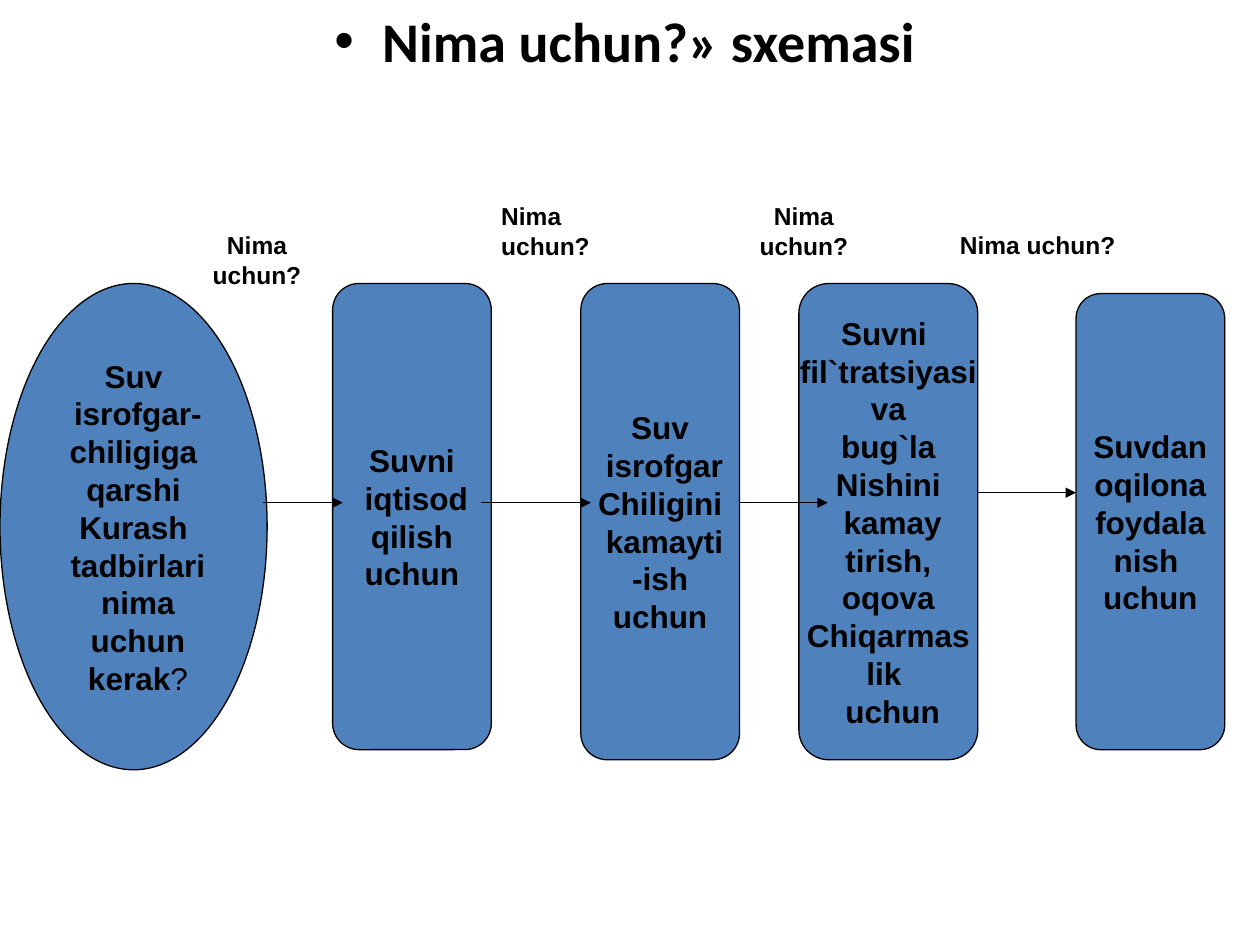
from lxml import etree
from pptx import Presentation
from pptx.dml.color import RGBColor
from pptx.enum.shapes import MSO_CONNECTOR, MSO_SHAPE
from pptx.enum.text import MSO_ANCHOR, MSO_AUTO_SIZE, PP_ALIGN
from pptx.oxml.ns import qn
from pptx.util import Inches, Pt

BLACK = RGBColor(0x00, 0x00, 0x00)
BLUE = RGBColor(0x4F, 0x81, 0xBD)
CENTER, LEFT = PP_ALIGN.CENTER, PP_ALIGN.LEFT
TOP, MIDDLE = MSO_ANCHOR.TOP, MSO_ANCHOR.MIDDLE
OVAL = MSO_SHAPE.FLOWCHART_CONNECTOR
ROUNDED = MSO_SHAPE.FLOWCHART_ALTERNATE_PROCESS
TITLE_ONLY = 5
ROW_TOP = 2.25
LABEL_FORMAT = {"name": "Arial", "size": Pt(14), "bold": True}
STEP_FORMAT = {"name": "Arial", "size": Pt(18), "bold": True}
TITLE_FORMAT = {"name": "Calibri", "size": Pt(32), "bold": True}


def add_span(para, text, text_format):
    span = para.add_run()
    span.text = text
    span.font.color.rgb = BLACK
    for name, value in text_format.items():
        setattr(span.font, name, value)
    return span


deck = Presentation()
deck.slide_width, deck.slide_height = Inches(10), Inches(7.5)
page = deck.slides.add_slide(deck.slide_layouts[TITLE_ONLY])

# Title with a hanging bullet
title = page.shapes.title
title.left, title.top = Inches(0.51), 0
title.width, title.height = Inches(9), Inches(6.41)
title.text_frame.vertical_anchor = TOP
title.text_frame.auto_size = MSO_AUTO_SIZE.NONE
para = title.text_frame.paragraphs[0]
para.alignment = CENTER
para.space_before = Pt(6.4)
add_span(para, "Nima uchun?» sxemasi ", TITLE_FORMAT)
props = para._p.get_or_add_pPr()
props.set("marL", str(Inches(0.38)))
props.set("indent", str(-Inches(0.38)))
etree.SubElement(props, qn("a:buFont")).set("typeface", "Arial")
etree.SubElement(props, qn("a:buChar")).set("char", "•")

# Chain of steps: preset, left, top, width, height, lines
steps = [
    (OVAL, 0, ROW_TOP, 2.12, 3.86,
     ["Suv", " isrofgar-", "chiligiga", " qarshi ", "Kurash", " tadbirlari",
      " nima", " uchun", " kerak"]),
    (ROUNDED, 2.64, ROW_TOP, 1.26, 3.7,
     ["Suvni", " iqtisod", " qilish ", "uchun"]),
    (ROUNDED, 4.61, ROW_TOP, 1.26, 3.78,
     ["Suv", " isrofgar", "Chiligini", " kamayti", "-ish", "uchun"]),
    (ROUNDED, 6.34, ROW_TOP, 1.42, 3.78,
     ["Suvni ", "fil`tratsiyasi", " va ", "bug`la", "Nishini", " kamay",
      "tirish,", " oqova ", "Chiqarmas", "lik ", " uchun"]),
    (ROUNDED, 8.54, 2.33, 1.18, 3.62,
     ["Suvdan", " oqilona ", "foydala", "nish ", "uchun"]),
]
for preset, left, top, width, height, lines in steps:
    box = page.shapes.add_shape(
        preset, Inches(left), Inches(top), Inches(width), Inches(height))
    box.shadow.inherit = False
    box.fill.solid()
    box.fill.fore_color.rgb = BLUE
    box.line.color.rgb = BLACK
    box.line.width = Pt(0.75)
    frame = box.text_frame
    frame.word_wrap = False
    frame.vertical_anchor = MIDDLE
    for number, line in enumerate(lines):
        para = frame.add_paragraph() if number else frame.paragraphs[0]
        para.alignment = CENTER
        add_span(para, line, STEP_FORMAT)
    if preset == OVAL:
        add_span(para, "?", {**STEP_FORMAT, "bold": False})

# Arrows between the steps: start, end, height on the page
for start, end, y in [(2.09, 2.72, 3.99), (3.82, 4.69, 3.99),
                      (5.87, 6.57, 3.99), (7.76, 8.54, 3.91)]:
    arrow = page.shapes.add_connector(
        MSO_CONNECTOR.STRAIGHT, Inches(start), Inches(y), Inches(end), Inches(y))
    arrow.line.color.rgb = BLACK
    arrow.line.width = Pt(0.75)
    etree.SubElement(arrow.line._get_or_add_ln(), qn("a:tailEnd")).set("type", "triangle")
    etree.SubElement(arrow._element.spPr, qn("a:effectLst"))

# The question above each arrow
for left, top, width, height, alignment in [
        (1.53, 1.78, 1.02, 0.57, CENTER), (3.88, 1.55, 1.2, 0.77, LEFT),
        (5.79, 1.55, 1.18, 0.57, CENTER), (7.52, 1.78, 1.78, 0.33, LEFT)]:
    label = page.shapes.add_textbox(
        Inches(left), Inches(top), Inches(width), Inches(height))
    label.text_frame.word_wrap = True
    label.text_frame.auto_size = MSO_AUTO_SIZE.SHAPE_TO_FIT_TEXT
    para = label.text_frame.paragraphs[0]
    para.alignment = alignment
    add_span(para, "Nima uchun?", LABEL_FORMAT)

deck.save("out.pptx")
